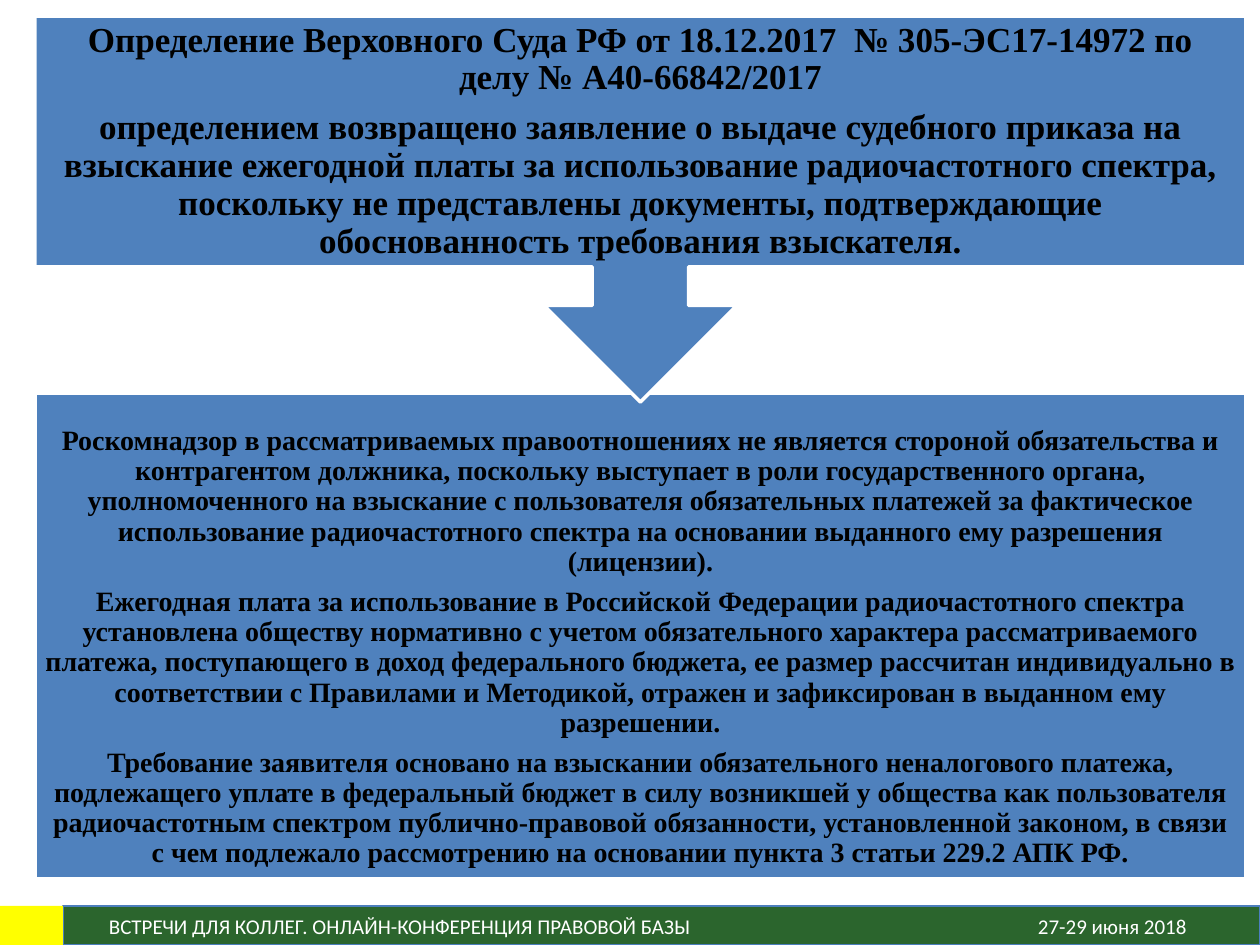
from dataclasses import dataclass
from typing import Optional

from pptx import Presentation
from pptx.dml.color import RGBColor
from pptx.enum.shapes import MSO_SHAPE
from pptx.enum.text import MSO_ANCHOR, PP_ALIGN
from pptx.util import Emu, Pt

PX = 914400 / 126
BLUE, WHITE, BLACK = "4F81BD", "FFFFFF", "000000"
GREEN, YELLOW, EDGE = "2B652D", "FFFF00", "4B7EBC"

CASE = [
    "Определение Верховного Суда РФ от 18.12.2017  № 305-ЭС17-14972 по делу № А40-66842/2017",
    "определением возвращено заявление о выдаче судебного приказа на взыскание ежегодной платы "
    "за использование радиочастотного спектра, поскольку не представлены документы, "
    "подтверждающие обоснованность требования взыскателя.",
]
REASONS = [
    "Роскомнадзор в рассматриваемых правоотношениях не является стороной обязательства и "
    "контрагентом должника, поскольку выступает в роли государственного органа, уполномоченного "
    "на взыскание с пользователя обязательных платежей за фактическое использование "
    "радиочастотного спектра на основании выданного ему разрешения (лицензии).",
    "Ежегодная плата за использование в Российской Федерации радиочастотного спектра установлена "
    "обществу нормативно с учетом обязательного характера рассматриваемого платежа, поступающего "
    "в доход федерального бюджета, ее размер рассчитан индивидуально в соответствии с Правилами "
    "и Методикой, отражен и зафиксирован в выданном ему разрешении.",
    "Требование заявителя основано на взыскании обязательного неналогового платежа, подлежащего "
    "уплате в федеральный бюджет в силу возникшей у общества как пользователя радиочастотным "
    "спектром публично-правовой обязанности, установленной законом, в связи с чем подлежало "
    "рассмотрению на основании пункта 3 статьи 229.2 АПК РФ.",
]


@dataclass(frozen=True)
class Box:
    x: int
    y: int
    w: int
    h: int
    fill: str
    line: Optional[str] = None
    width: float = 0.75
    kind: MSO_SHAPE = MSO_SHAPE.RECTANGLE


@dataclass(frozen=True)
class Label:
    x: int
    w: int
    text: str


BARS = [
    Box(63, 906, 1197, 39, GREEN, EDGE),
    Box(0, 906, 63, 39, YELLOW),
]
LABELS = [
    Label(109, 700, "ВСТРЕЧИ ДЛЯ КОЛЛЕГ. ОНЛАЙН-КОНФЕРЕНЦИЯ ПРАВОВОЙ БАЗЫ"),
    Label(1038, 200, "27-29 июня 2018"),
]
LOWER = Box(35, 393, 1211, 486, BLUE, WHITE, 2)
UPPER = Box(35, 16, 1211, 386, BLUE, WHITE, 2, MSO_SHAPE.DOWN_ARROW_CALLOUT)


def px(n: int) -> Emu:
    return Emu(round(n * PX))


def rgb(code: str) -> RGBColor:
    return RGBColor.from_string(code)


def draw(slide, box: Box):
    shape = slide.shapes.add_shape(box.kind, px(box.x), px(box.y), px(box.w), px(box.h))
    shape.shadow.inherit = False
    shape.fill.solid()
    shape.fill.fore_color.rgb = rgb(box.fill)
    if box.line:
        shape.line.color.rgb = rgb(box.line)
        shape.line.width = Pt(box.width)
    else:
        shape.line.fill.background()
    return shape


def write(shape, paras: list[str], *, size: int, font: str = "Times New Roman",
          color: str = BLACK, bold: bool = True, align=PP_ALIGN.CENTER,
          anchor=MSO_ANCHOR.MIDDLE, inset: int = 0, spacing: float = 0.9) -> None:
    """Fill a shape with paragraphs set apart by 35% of the text size."""
    frame = shape.text_frame
    frame.word_wrap = True
    frame.vertical_anchor = anchor
    frame.margin_left = frame.margin_right = px(inset)
    frame.margin_top = frame.margin_bottom = px(inset)
    for i, text in enumerate(paras):
        para = frame.add_paragraph() if i else frame.paragraphs[0]
        para.alignment = align
        para.line_spacing = spacing
        if i:
            para.space_before = Pt(0.35 * size)
        run = para.add_run()
        run.text = text
        run.font.name = font
        run.font.size = Pt(size)
        run.font.bold = bold
        run.font.color.rgb = rgb(color)


def main() -> None:
    deck = Presentation()
    deck.slide_width, deck.slide_height = px(1260), px(945)
    slide = deck.slides.add_slide(deck.slide_layouts[6])

    for bar in BARS:
        draw(slide, bar)
    for label in LABELS:
        box = slide.shapes.add_textbox(px(label.x), px(907), px(label.w), px(38))
        write(box, [label.text], size=12, font="Calibri", color=WHITE, bold=False,
              align=PP_ALIGN.LEFT, spacing=1.0)

    write(draw(slide, LOWER), REASONS, size=16, anchor=MSO_ANCHOR.BOTTOM, inset=10)
    write(draw(slide, UPPER), CASE, size=20, inset=20)
    deck.save("out.pptx")


if __name__ == "__main__":
    main()
